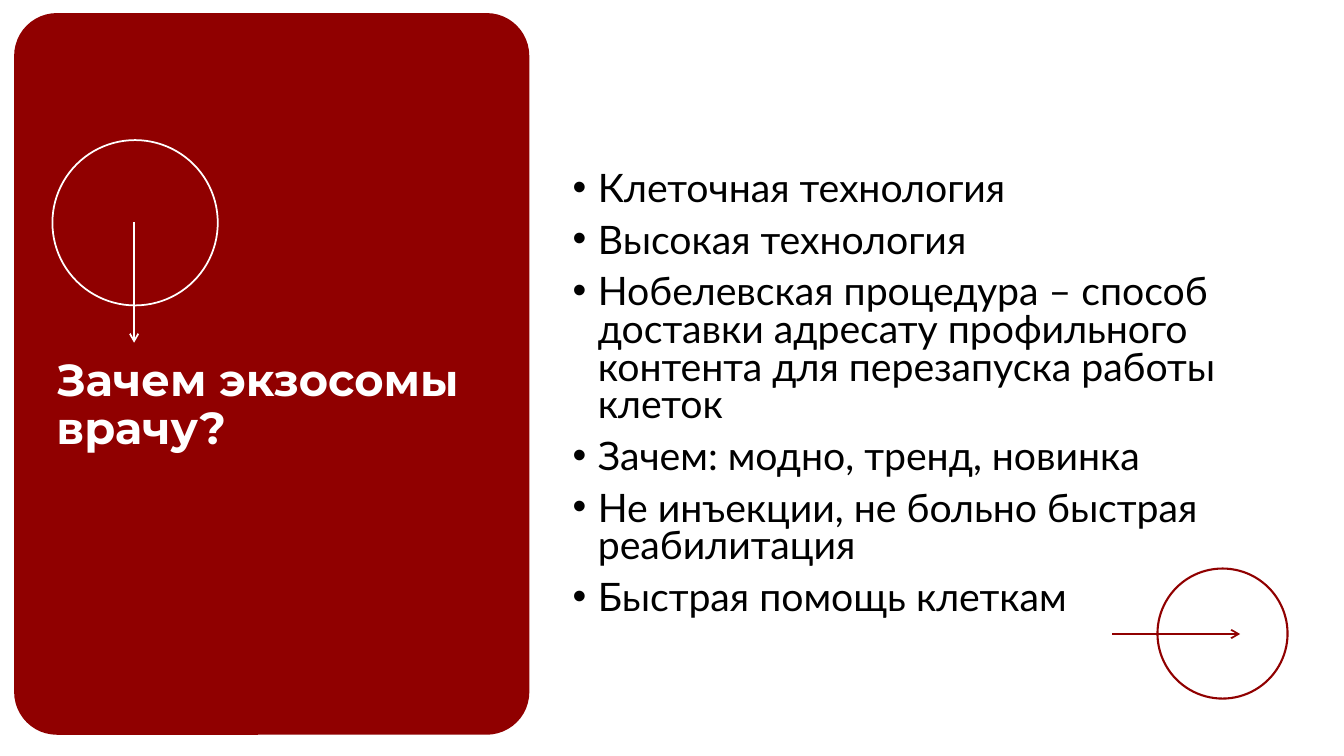
from dataclasses import dataclass

from lxml import etree
from pptx import Presentation
from pptx import util as u
from pptx.dml.color import RGBColor
from pptx.enum import shapes, text
from pptx.oxml.ns import qn
from pptx.shapes.autoshape import Shape
from pptx.shapes.shapetree import GroupShapes, SlideShapes
from pptx.text.text import TextFrame


@dataclass(frozen=True)
class Theme:
    red: RGBColor = RGBColor(0x90, 0x00, 0x00)
    white: RGBColor = RGBColor(0xFF, 0xFF, 0xFF)
    black: RGBColor = RGBColor(0x00, 0x00, 0x00)
    title_font: str = "Montserrat"
    body_font: str = "Lato"
    title_size: u.Pt = u.Pt(32)
    body_size: u.Pt = u.Pt(28)
    arrow_width: u.Pt = u.Pt(1.25)


@dataclass(frozen=True)
class Box:
    left: float
    top: float
    width: float
    height: float

    def emu(self) -> list[u.Inches]:
        return [u.Inches(v) for v in (self.left, self.top, self.width, self.height)]


@dataclass(frozen=True)
class CircleArrow:
    circle: Box
    start: tuple[float, float]
    end: tuple[float, float]
    color: RGBColor
    circle_width: u.Pt


THEME = Theme()

PANEL = Box(0.14, 0.13, 5.11, 7.16)
TITLE = Box(0.46, 3.5, 4.9, 1.07)
BODY = Box(5.58, 1.66, 6.86, 4.76)
PANEL_ARROW = CircleArrow(Box(0.52, 1.39, 1.64, 1.64), (1.33, 2.2), (1.33, 3.4),
                          THEME.white, u.Pt(1.25))
CORNER_ARROW = CircleArrow(Box(11.48, 5.64, 1.29, 1.29), (11.03, 6.29), (12.3, 6.29),
                           THEME.red, u.Pt(1.5))

REASONS = [
    "Клеточная технология",
    "Высокая технология",
    "Нобелевская процедура – способ доставки адресату профильного контента "
    "для перезапуска работы клеток",
    "Зачем: модно, тренд, новинка",
    "Не инъекции, не больно быстрая реабилитация",
    "Быстрая помощь клеткам",
]


def place_text(sp: Shape, box: Box) -> TextFrame:
    sp.left, sp.top, sp.width, sp.height = box.emu()
    tf = sp.text_frame
    tf.word_wrap = True
    tf.auto_size = text.MSO_AUTO_SIZE.NONE
    tf.vertical_anchor = text.MSO_ANCHOR.TOP
    return tf


def draw_panel(tree: SlideShapes, box: Box) -> Shape:
    sp = tree.add_shape(shapes.MSO_SHAPE.ROUNDED_RECTANGLE, *box.emu())
    sp.adjustments[0] = 0.083
    sp.shadow.inherit = False
    sp.fill.solid()
    sp.fill.fore_color.rgb = THEME.red
    sp.line.fill.background()
    return sp


def draw_circle_arrow(tree: SlideShapes | GroupShapes, item: CircleArrow) -> None:
    sp = tree.add_shape(shapes.MSO_SHAPE.OVAL, *item.circle.emu())
    sp.shadow.inherit = False
    sp.fill.background()
    sp.line.color.rgb = item.color
    sp.line.width = item.circle_width

    ends = [u.Inches(v) for v in item.start + item.end]
    arrow = tree.add_connector(shapes.MSO_CONNECTOR.STRAIGHT, *ends)
    arrow.line.color.rgb = item.color
    arrow.line.width = THEME.arrow_width
    props = arrow.element.spPr
    etree.SubElement(props.find(qn("a:ln")), qn("a:tailEnd"), type="arrow")
    etree.SubElement(props, qn("a:effectLst"))


def write_title(sp: Shape) -> None:
    tf = place_text(sp, TITLE)
    p = tf.paragraphs[0]
    p.text = "Зачем экзосомы врачу?"
    p.alignment = text.PP_ALIGN.LEFT
    p.line_spacing = 0.9
    p.font.name = THEME.title_font
    p.font.size = THEME.title_size
    p.font.bold = True
    p.font.color.rgb = THEME.white


def write_reasons(sp: Shape) -> None:
    tf = place_text(sp, BODY)
    for i, reason in enumerate(REASONS):
        p = tf.add_paragraph() if i else tf.paragraphs[0]
        p.text = reason
        p.line_spacing = 0.8
        p.space_before = u.Pt(10 if i else 0)
        props = p._p.get_or_add_pPr()
        props.set("marL", str(u.Inches(0.25)))
        props.set("indent", str(u.Inches(-0.25)))
        etree.SubElement(props, qn("a:buFont"), typeface="Arial")
        etree.SubElement(props, qn("a:buChar"), char="•")
        p.font.name = THEME.body_font
        p.font.size = THEME.body_size
        p.font.color.rgb = THEME.black


def main() -> None:
    prs = Presentation()
    prs.slide_width, prs.slide_height = u.Inches(13.33), u.Inches(7.5)
    s = prs.slides.add_slide(prs.slide_layouts.get_by_name("Title and Content"))
    title, body = s.shapes.title, s.placeholders[1]

    # Red panel behind the title
    panel = draw_panel(s.shapes, PANEL)
    title.element.addprevious(panel.element)

    # Title and list
    write_title(title)
    write_reasons(body)

    # Circles with arrows
    draw_circle_arrow(s.shapes, PANEL_ARROW)
    draw_circle_arrow(s.shapes.add_group_shape().shapes, CORNER_ARROW)

    prs.save("out.pptx")


if __name__ == "__main__":
    main()
